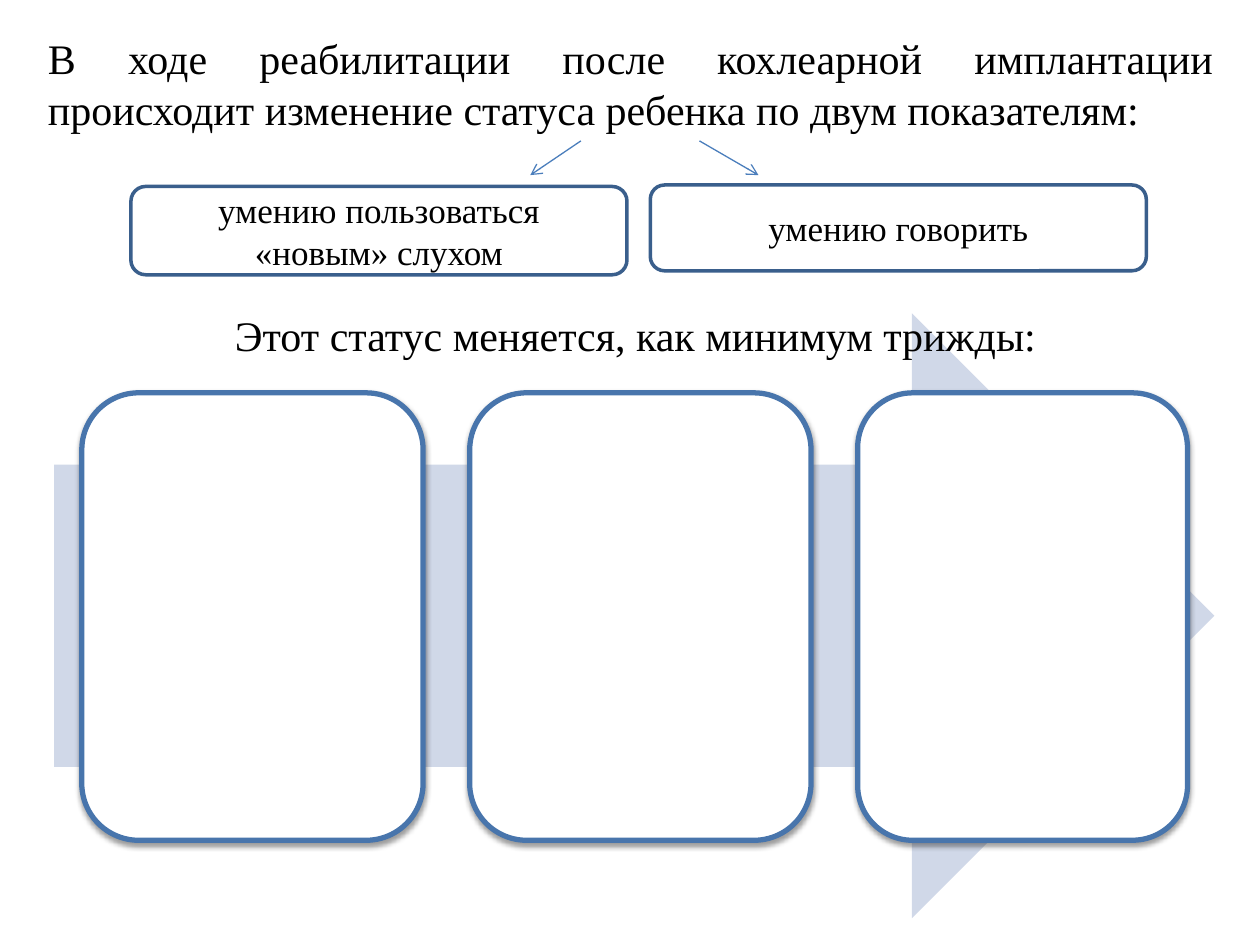
from lxml import etree
from pptx import Presentation
from pptx.dml.color import RGBColor
from pptx.enum.shapes import MSO_CONNECTOR, MSO_SHAPE
from pptx.enum.text import MSO_ANCHOR, MSO_AUTO_SIZE, PP_ALIGN
from pptx.oxml import parse_xml
from pptx.oxml.ns import nsdecls, qn
from pptx.util import Cm, Pt

ROUNDED = MSO_SHAPE.ROUNDED_RECTANGLE
PROCESS = MSO_SHAPE.FLOWCHART_ALTERNATE_PROCESS
RIGHT_ARROW = MSO_SHAPE.RIGHT_ARROW
STRAIGHT = MSO_CONNECTOR.STRAIGHT
CENTER, JUSTIFY = PP_ALIGN.CENTER, PP_ALIGN.JUSTIFY
TOP, MIDDLE = MSO_ANCHOR.TOP, MSO_ANCHOR.MIDDLE
FONT = "Times New Roman"
COLORS = {
    "text": "000000", "white": "FFFFFF", "arrow": "D0D8E8",
    "card": "4875AC", "indicator": "3A5F8C", "pointer": "4B7EBC",
}

# Boxes are left, top, width, height in centimetres
TITLE = "В ходе реабилитации после кохлеарной имплантации происходит изменение статуса ребенка по двум показателям:"
TITLE_BOX = (0.71, 0.53, 24, 2.31)
STATUS = "Этот статус меняется, как минимум трижды:"
STATUS_BOX = (3.71, 6.12, 18.21, 1.27)
INDICATORS = [
    ("умению пользоваться «новым» слухом", (2.64, 3.76, 10, 1.78)),
    ("умению говорить", (13.11, 3.73, 10, 1.73)),
]
POINTERS = [(11.71, 2.84, 10.69, 3.53), (14.1, 2.84, 15.29, 3.53)]
ARROW_BOX = (1.09, 6.32, 23.39, 12.19)
CARD_LEFT, CARD_TOP, CARD_HEIGHT, CARD_PITCH = 1.65, 7.92, 9.02, 7.82
CARD_WIDTHS = [6.88, 6.88, 6.65]


def rgb(name):
    return RGBColor.from_string(COLORS[name])


def lengths(values):
    return [Cm(value) for value in values]


def write(shape, text, size, alignment, anchor):
    frame = shape.text_frame
    frame_format = {
        "word_wrap": True, "auto_size": MSO_AUTO_SIZE.NONE, "vertical_anchor": anchor,
    }
    for name, value in frame_format.items():
        setattr(frame, name, value)
    paragraph = frame.paragraphs[0]
    paragraph.alignment = alignment
    run = paragraph.add_run()
    run.text = text
    for name, value in {"name": FONT, "size": Pt(size)}.items():
        setattr(run.font, name, value)
    run.font.color.rgb = rgb("text")


def add_block(slide, kind, box, fill, line=None, line_width=0):
    shape = slide.shapes.add_shape(kind, *lengths(box))
    shape.fill.solid()
    shape.fill.fore_color.rgb = rgb(fill)
    if line:
        shape.line.color.rgb = rgb(line)
        shape.line.width = Pt(line_width)
    else:
        shape.line.fill.background()
    shape.shadow.inherit = False
    return shape


def add_soft_shadow(shape):
    effects = shape._element.spPr.find(qn("a:effectLst"))
    effects.append(parse_xml(
        f'<a:outerShdw {nsdecls("a")} blurRad="{Pt(3.1)}" dist="{Pt(1.6)}" '
        'dir="5400000" rotWithShape="0"><a:srgbClr val="000000">'
        '<a:alpha val="38000"/></a:srgbClr></a:outerShdw>'
    ))


def add_pointer(slide, ends):
    connector = slide.shapes.add_connector(STRAIGHT, *lengths(ends))
    connector.line.color.rgb = rgb("pointer")
    connector.line.width = Pt(0.75)
    etree.SubElement(connector.line._get_or_add_ln(), qn("a:tailEnd"), type="arrow")
    etree.SubElement(connector._element.spPr, qn("a:effectLst"))


def main():
    presentation = Presentation()
    presentation.slide_width, presentation.slide_height = Cm(25.4), Cm(19.05)
    slide = presentation.slides.add_slide(presentation.slide_layouts[5])

    title = slide.shapes.title
    for name, value in zip(("left", "top", "width", "height"), lengths(TITLE_BOX)):
        setattr(title, name, value)
    write(title, TITLE, 24, JUSTIFY, TOP)

    add_block(slide, RIGHT_ARROW, ARROW_BOX, "arrow")
    for index, width in enumerate(CARD_WIDTHS):
        box = (CARD_LEFT + index * CARD_PITCH, CARD_TOP, width, CARD_HEIGHT)
        add_soft_shadow(add_block(slide, ROUNDED, box, "white", "card", 3))

    for text, box in INDICATORS:
        indicator = add_block(slide, PROCESS, box, "white", "indicator", 2)
        write(indicator, text, 20, CENTER, MIDDLE)

    status = slide.shapes.add_textbox(*lengths(STATUS_BOX))
    write(status, STATUS, 24, CENTER, TOP)
    for ends in POINTERS:
        add_pointer(slide, ends)

    presentation.save("out.pptx")


if __name__ == "__main__":
    main()
